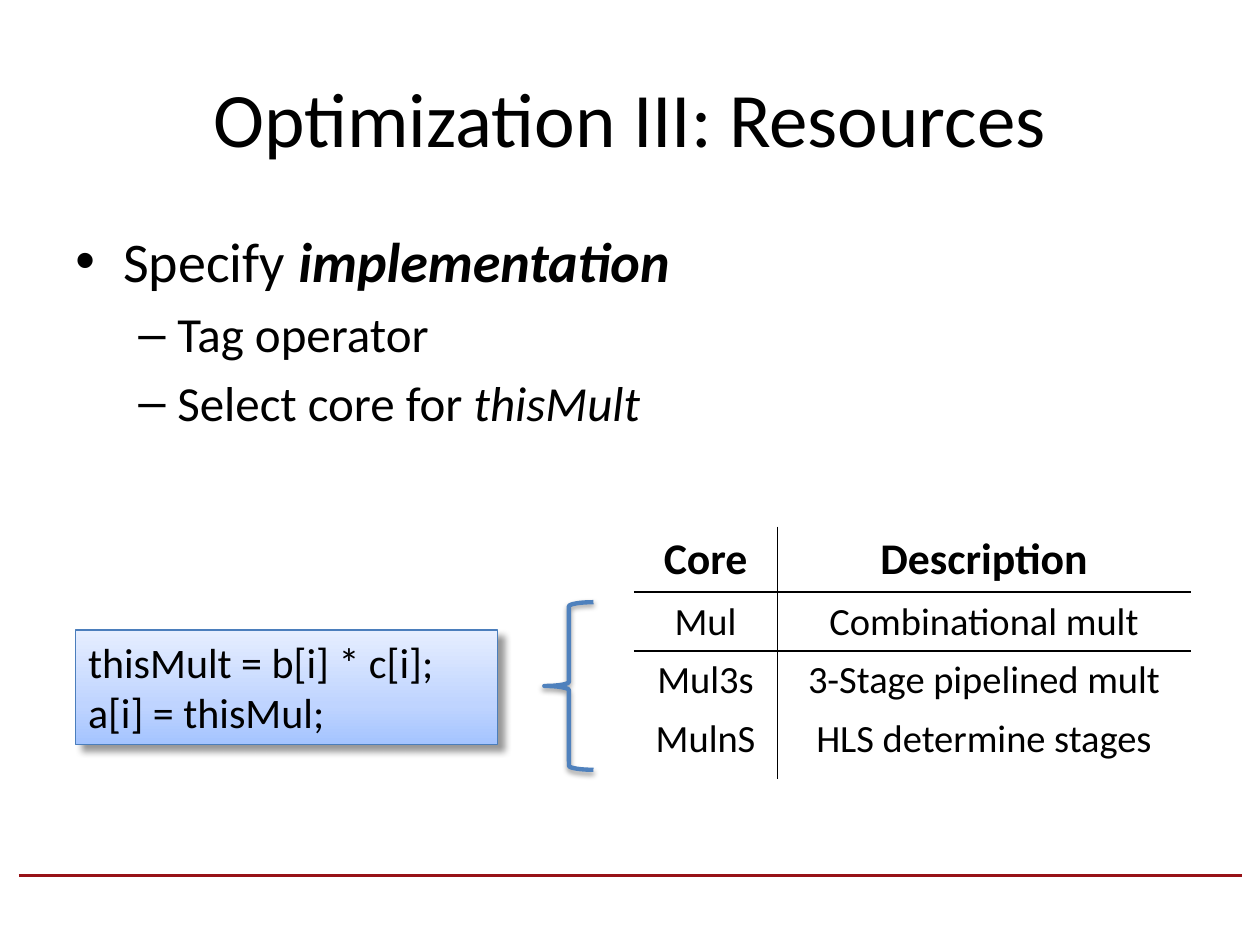
"""Build the slide on choosing a hardware core for a tagged operator."""
from dataclasses import dataclass
from typing import NamedTuple

from lxml.etree import SubElement
from pptx import Presentation
from pptx.dml.color import RGBColor
from pptx.enum.shapes import MSO_CONNECTOR, MSO_SHAPE
from pptx.enum.text import MSO_ANCHOR as ANCHOR, MSO_AUTO_SIZE as FIT, PP_ALIGN as ALIGN
from pptx.oxml.ns import qn
from pptx.util import Inches, Pt

COLORS = {
    "ink": "000000",
    "rule": "971217",
    "box_line": "4B7EBC",
    "brace": "4F81BD",
    "box_low": "A4C4FF",
    "box_mid": "BFD4FF",
    "box_high": "E6EEFF",
}
FONT = "Calibri"
COLS, ROWS = 100, 75
SLIDE_W, SLIDE_H = Inches(10), Inches(7.5)
PLAIN_TABLE = "{2D5ABB26-0587-4C30-8999-92F81FD0307C}"


class Area(NamedTuple):
    col: float
    row: float
    cols: float
    rows: float

    def emu(self) -> tuple:
        return gx(self.col), gy(self.row), gx(self.cols), gy(self.rows)


@dataclass
class Bullet:
    runs: list
    size: float
    mark: str
    left: float
    hang: float


@dataclass
class Shadow:
    opacity: int
    blur: float
    dist: float
    angle: int


def gx(cols: float) -> int:
    return round(SLIDE_W * cols / COLS)


def gy(rows: float) -> int:
    return round(SLIDE_H * rows / ROWS)


def rgb(name: str) -> RGBColor:
    return RGBColor.from_string(COLORS[name])


def add_text(p, text: str, *, size: float, bold=False, italic=False, align=None):
    r = p.add_run()
    r.text = text
    f = r.font
    f.name, f.size, f.bold, f.italic = FONT, Pt(size), bold, italic
    f.color.rgb = rgb("ink")
    if align is not None:
        p.alignment = align


def add_bullet(p, item: Bullet, first: bool):
    pPr = p._p.get_or_add_pPr()
    pPr.set("marL", str(gx(item.left)))
    pPr.set("indent", str(-gx(item.hang)))
    SubElement(pPr, qn("a:buFont"), typeface="Arial")
    SubElement(pPr, qn("a:buChar"), char=item.mark)
    p.space_before = Pt(0 if first else item.size * 0.2)
    for text, style in item.runs:
        add_text(p, text, size=item.size, **style)


def set_line(line, color: str, width: float):
    line.color.rgb = rgb(color)
    line.width = Pt(width)


def set_shadow(s, shadow: Shadow):
    s.shadow.inherit = False
    effects = s._element.spPr.find(qn("a:effectLst"))
    outer = SubElement(effects, qn("a:outerShdw"), blurRad=str(Pt(shadow.blur)),
                       dist=str(Pt(shadow.dist)), dir=str(shadow.angle * 60000),
                       rotWithShape="0")
    clr = SubElement(outer, qn("a:srgbClr"), val=COLORS["ink"])
    SubElement(clr, qn("a:alpha"), val=str(shadow.opacity * 1000))


def set_gradient(s, stops: list):
    s.fill.gradient()
    s.fill.gradient_angle = 90
    gs_list = s._element.spPr.find(qn("a:gradFill")).find(qn("a:gsLst"))
    for old in list(gs_list):
        gs_list.remove(old)
    for pos, color in stops:
        gs = SubElement(gs_list, qn("a:gs"), pos=str(pos * 1000))
        SubElement(gs, qn("a:srgbClr"), val=COLORS[color])


def set_borders(cell, sides: str):
    tcPr = cell._tc.get_or_add_tcPr()
    for i, side in enumerate(sides):
        ln = SubElement(tcPr, qn(f"a:ln{side}"), w=str(Pt(1)))
        fill = SubElement(ln, qn("a:solidFill"))
        SubElement(fill, qn("a:srgbClr"), val=COLORS["ink"])
        tcPr.insert(i, ln)


def add_rule(slide):
    s = slide.shapes.add_connector(MSO_CONNECTOR.STRAIGHT, gx(1.5), gy(69.5), gx(98.6), gy(69.5))
    set_line(s.line, "rule", 2)
    SubElement(s._element.spPr, qn("a:effectLst"))


def add_title(slide, text: str, area: Area):
    sp = slide.shapes.title
    sp.left, sp.top, sp.width, sp.height = area.emu()
    tf = sp.text_frame
    tf.vertical_anchor = ANCHOR.MIDDLE
    add_text(tf.paragraphs[0], text, size=44, align=ALIGN.CENTER)


def add_bullets(slide, items: list, area: Area):
    tf = slide.shapes.add_textbox(*area.emu()).text_frame
    tf.word_wrap = True
    for i, item in enumerate(items):
        add_bullet(tf.add_paragraph() if i else tf.paragraphs[0], item, i == 0)


def add_code(slide, lines: list, area: Area):
    s = slide.shapes.add_shape(MSO_SHAPE.RECTANGLE, *area.emu())
    set_gradient(s, [(0, "box_low"), (35, "box_mid"), (100, "box_high")])
    set_line(s.line, "box_line", 0.75)
    set_shadow(s, Shadow(40, 4, 5, 45))
    tf = s.text_frame
    tf.word_wrap, tf.auto_size, tf.vertical_anchor = True, FIT.SHAPE_TO_FIT_TEXT, ANCHOR.TOP
    for i, line in enumerate(lines):
        p = tf.add_paragraph() if i else tf.paragraphs[0]
        add_text(p, line, size=24, align=ALIGN.LEFT)


def add_core_table(slide, rows: list, area: Area, widths: list, heights: list):
    frame = slide.shapes.add_table(len(rows), len(widths), *area.emu())
    table = frame.table
    table.first_row = table.horz_banding = False
    table._tbl.tblPr.find(qn("a:tableStyleId")).text = PLAIN_TABLE
    for column, width in zip(table.columns, widths):
        column.width = gx(width)
    for i, (height, row) in enumerate(zip(heights, rows)):
        table.rows[i].height = gy(height)
        for j, text in enumerate(row):
            cell = table.cell(i, j)
            cell.fill.background()
            head = i == 0
            add_text(cell.text_frame.paragraphs[0], text, size=25 if head else 22,
                     bold=head, align=ALIGN.CENTER)
            set_borders(cell, "RL"[j] + {0: "B", 1: "T"}.get(i, ""))


def add_brace(slide, area: Area):
    s = slide.shapes.add_shape(MSO_SHAPE.LEFT_BRACE, *area.emu())
    s.fill.background()
    set_line(s.line, "brace", 2.5)
    set_shadow(s, Shadow(38, 3.1, 1.6, 90))


def main():
    prs = Presentation()
    prs.slide_width, prs.slide_height = SLIDE_W, SLIDE_H
    slide = prs.slides.add_slide(prs.slide_layouts[5])
    add_rule(slide)
    add_title(slide, "Optimization III: Resources", Area(5, 3, 90, 12.5))
    strong, slanted = {"bold": True, "italic": True}, {"italic": True}
    add_bullets(slide, [
        Bullet([("Specify ", {}), ("implementation", strong)], 32, "•", 3.8, 3.8),
        Bullet([("Tag operator", {})], 28, "–", 8.1, 3.1),
        Bullet([("Select core for ", {}), ("thisMult", slanted)], 28, "–", 8.1, 3.1),
    ], Area(5, 17.5, 90, 49.5))
    add_code(slide, ["thisMult = b[i] * c[i];", "a[i] = thisMul;"], Area(6, 50, 33.5, 9.1))
    add_core_table(slide, [
        ("Core", "Description"),
        ("Mul", "Combinational mult"),
        ("Mul3s", "3-Stage pipelined mult"),
        ("MulnS", "HLS determine stages"),
    ], Area(50.3, 41.8, 44.2, 20), [11.4, 32.8], [5.2, 4.6, 4.6, 5.5])
    add_brace(slide, Area(43.2, 47.8, 3.9, 13.3))
    prs.save("out.pptx")


if __name__ == "__main__":
    main()
